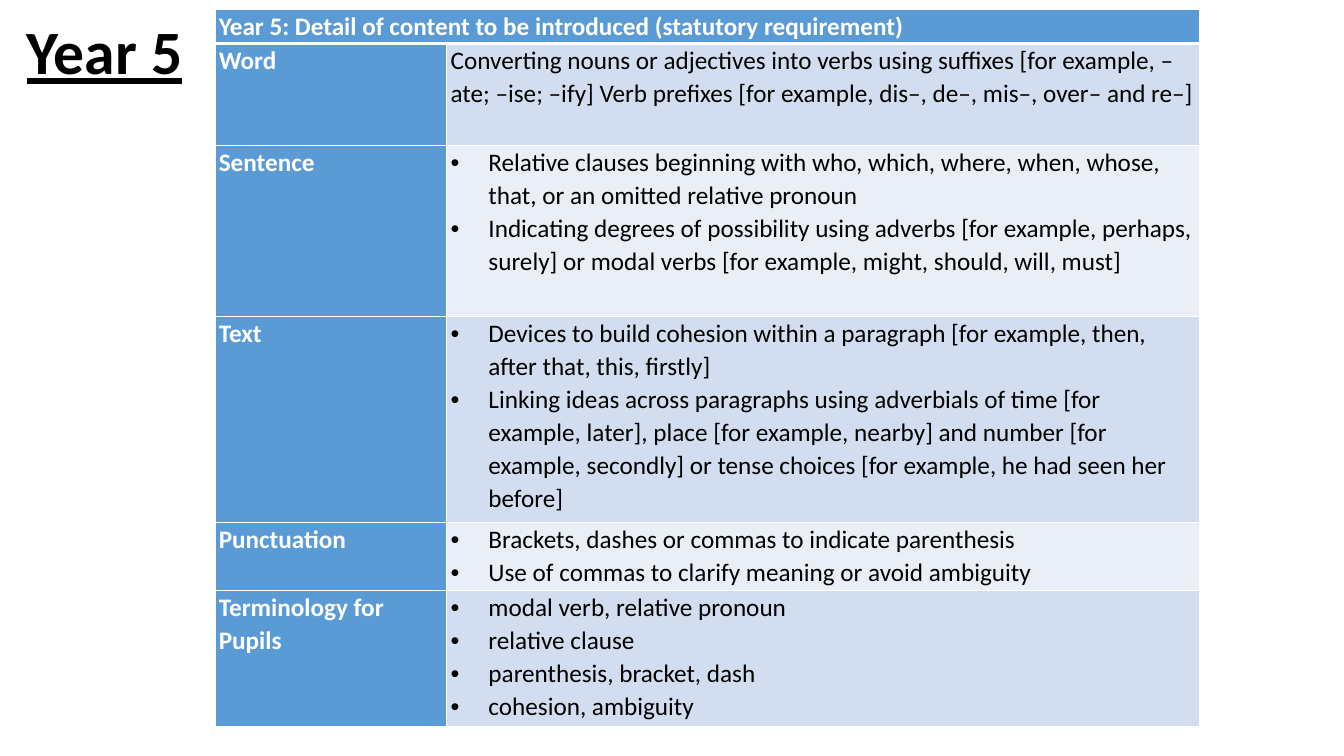
from lxml import etree
from pptx import Presentation
from pptx.dml.color import RGBColor
from pptx.enum.text import MSO_ANCHOR
from pptx.oxml.ns import qn
from pptx.util import Pt

MIDDLE = MSO_ANCHOR.MIDDLE

# Content: row label, row height, paragraphs, bulleted or not
TITLE = "Year 5"
HEADER = "Year 5: Detail of content to be introduced (statutory requirement)"
HEADER_H = 24.5
ROWS = [
    ("Word", 72.8, [
        "Converting nouns or adjectives into verbs using suffixes [for example, –ate; –ise; –ify] "
        "Verb prefixes [for example, dis–, de–, mis–, over– and re–]",
    ], False),
    ("Sentence", 122.4, [
        "Relative clauses beginning with who, which, where, when, whose, that, "
        "or an omitted relative pronoun",
        "Indicating degrees of possibility using adverbs [for example, perhaps, surely] "
        "or modal verbs [for example, might, should, will, must]",
    ], True),
    ("Text", 146.8, [
        "Devices to build cohesion within a paragraph [for example, then, after that, this, firstly]",
        "Linking ideas across paragraphs using adverbials of time [for example, later], "
        "place [for example, nearby] and number [for example, secondly] "
        "or tense choices [for example, he had seen her before]",
    ], True),
    ("Punctuation", 49, [
        "Brackets, dashes or commas to indicate parenthesis",
        "Use of commas to clarify meaning or avoid ambiguity",
    ], True),
    ("Terminology for Pupils", 97.2, [
        "modal verb, relative pronoun",
        "relative clause",
        "parenthesis, bracket, dash",
        "cohesion, ambiguity",
    ], True),
]

# Theme and layout, in points
THEME = {
    "font": "Calibri", "title": 44, "body": 18,
    "ink": "000000", "white": "FFFFFF", "blue": "5B9BD5",
    "bands": ("D2DEEF", "EAEFF7"),
}
SLIDE_W, SLIDE_H = 960, 540
TITLE_BOX = (12.2, -13, 828, 104.4)
TABLE_LEFT, TABLE_TOP = 153.6, 6.5
COL_W = (165.6, 537.4)
CELL_INSET = 2.7
INDENT = 27
THIN, THICK = 1, 3


def style(p, size, color, bold, spacing):
    p.line_spacing = spacing
    for r in p.runs:
        f = r.font
        f.name, f.size, f.bold = THEME["font"], Pt(size), bold
        f.color.rgb = RGBColor.from_string(color)


def add_bullet(p):
    pPr = p._p.get_or_add_pPr()
    pPr.set("marL", str(Pt(INDENT)))
    pPr.set("indent", str(-Pt(INDENT)))
    etree.SubElement(pPr, qn("a:buFont")).set("typeface", "Arial")
    etree.SubElement(pPr, qn("a:buChar")).set("char", "•")


def add_borders(cell, top, bottom):
    tcPr = cell._tc.get_or_add_tcPr()
    for side, width in (("L", THIN), ("R", THIN), ("T", top), ("B", bottom)):
        ln = etree.SubElement(tcPr, qn("a:ln" + side), w=str(Pt(width)))
        fill = etree.SubElement(ln, qn("a:solidFill"))
        etree.SubElement(fill, qn("a:srgbClr")).set("val", THEME["white"])


def fill_cell(cell, lines, fill, color, bold=False, bulleted=False):
    cell.margin_left = cell.margin_right = Pt(CELL_INSET)
    cell.margin_top = cell.margin_bottom = 0
    cell.fill.solid()
    cell.fill.fore_color.rgb = RGBColor.from_string(fill)
    cell.text_frame.text = "\n".join(lines)
    for p in cell.text_frame.paragraphs:
        if bulleted:
            add_bullet(p)
        style(p, THEME["body"], color, bold, 1.07)


prs = Presentation()
prs.slide_width, prs.slide_height = Pt(SLIDE_W), Pt(SLIDE_H)
s = prs.slides.add_slide(prs.slide_layouts[6])

# Title
tf = s.shapes.add_textbox(*map(Pt, TITLE_BOX)).text_frame
tf.word_wrap = True
tf.vertical_anchor = MIDDLE
tf.text = TITLE
p = tf.paragraphs[0]
style(p, THEME["title"], THEME["ink"], True, 0.9)
p.runs[0].font.underline = True

# Table grid
heights = [HEADER_H] + [row[1] for row in ROWS]
table = s.shapes.add_table(
    len(heights), len(COL_W), Pt(TABLE_LEFT), Pt(TABLE_TOP), Pt(sum(COL_W)), Pt(sum(heights))
).table
for col, width in zip(table.columns, COL_W):
    col.width = Pt(width)
for i, height in enumerate(heights):
    table.rows[i].height = Pt(height)
    for cell in table.rows[i].cells:
        add_borders(cell, THICK if i == 1 else THIN, THICK if i == 0 else THIN)

# Header row, then one row per topic
table.cell(0, 0).merge(table.cell(0, 1))
fill_cell(table.cell(0, 0), [HEADER], THEME["blue"], THEME["white"], bold=True)
for i, (label, _, lines, bulleted) in enumerate(ROWS):
    fill_cell(table.cell(i + 1, 0), [label], THEME["blue"], THEME["white"], bold=True)
    fill_cell(table.cell(i + 1, 1), lines, THEME["bands"][i % 2], THEME["ink"], bulleted=bulleted)

prs.save("out.pptx")
